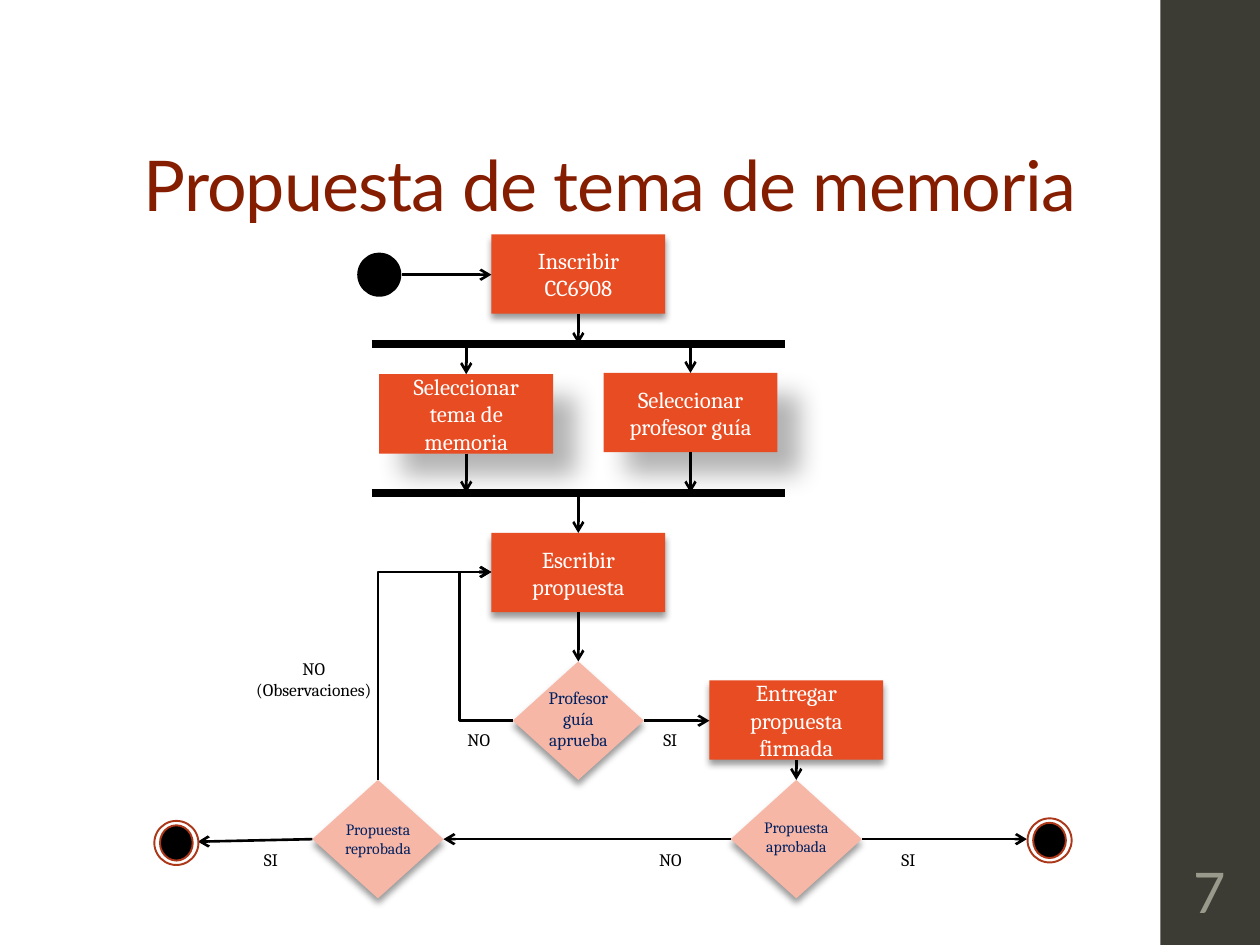
from lxml import etree
from pptx import Presentation
from pptx import util as u
from pptx.dml.color import RGBColor
from pptx.enum import shapes, text
from pptx.oxml.ns import qn

COLORS = {
    "band": "3C3C34", "title": "851D00", "number": "9A9A8C", "task": "E84C22",
    "decision": "F6B7A7", "decision_text": "002060", "ring": "AC3819",
    "ink": "000000", "paper": "FFFFFF",
}
TITLE = "Propuesta de tema de memoria"
PAGE_NUMBER = "7"
TASK_W, TASK_H = 1.38, 0.63
DECISION_W, DECISION_H = 1.04, 0.94
CENTER, LEFT, RIGHT, DELIVERY = 4.59, 3.7, 5.48, 6.32
REJECTED = 3.0
FORK_Y, JOIN_Y, FINAL_Y = 2.73, 3.91, 6.66

NEAR_SHADOW = {"alpha": 40, "blur": 4, "dist": 3, "dir": 90}
FAR_SHADOW = {"alpha": 30, "blur": 15, "dist": 18, "dir": 45}

TASKS = [
    ("Inscribir CC6908", CENTER, 1.86, NEAR_SHADOW),
    ("Seleccionar profesor guía", RIGHT, 2.96, FAR_SHADOW),
    ("Seleccionar tema de memoria", LEFT, 2.97, FAR_SHADOW),
    ("Escribir propuesta", CENTER, 4.23, NEAR_SHADOW),
    ("Entregar propuesta firmada", DELIVERY, 5.4, NEAR_SHADOW),
]
DECISIONS = [
    (["Profesor", "guía aprueba"], CENTER, 5.25, 5.4, 0.61, 10),
    (["Propuesta aprobada"], DELIVERY, 6.19, 6.44, 0.4, 9),
    (["Propuesta reprobada"], REJECTED, 6.19, 6.46, 0.4, 9),
]
BARS = [FORK_Y, JOIN_Y]
ARROWS = [
    (CENTER, 2.49, CENTER, FORK_Y),
    (LEFT, FORK_Y, LEFT, 2.97),
    (RIGHT, FORK_Y, RIGHT, 2.96),
    (LEFT, 3.6, LEFT, JOIN_Y),
    (RIGHT, 3.59, RIGHT, JOIN_Y),
    (CENTER, JOIN_Y, CENTER, 4.23),
    (CENTER, 4.86, CENTER, 5.25),
    (5.11, 5.72, 5.63, 5.72),
    (DELIVERY, 6.03, DELIVERY, 6.19),
    (5.8, FINAL_Y, 3.52, FINAL_Y),
    (3.19, 2.18, 3.9, 2.18),
    (2.48, FINAL_Y, 1.57, 6.68),
    (6.84, FINAL_Y, 8.15, FINAL_Y),
]
RETURNS = [
    (4.07, 5.72, 3.9, 4.54, 248300),
    (REJECTED, 6.19, 3.9, 4.54, 0),
]
START = (3.01, 2.18)
ENDS = [(8.33, 6.67), (1.4, 6.69)]
LABELS = [
    ("SI", 1.93, 6.69, 0.44, 0.27),
    ("NO\n(Observaciones)", 1.79, 5.17, 1.4, 0.44),
    ("SI", 6.99, 6.69, 0.44, 0.27),
    ("NO", 3.58, 5.74, 0.44, 0.27),
    ("NO", 5.1, 6.69, 0.44, 0.27),
    ("SI", 5.1, 5.74, 0.44, 0.27),
]

deck = Presentation()
deck.slide_width, deck.slide_height = u.Inches(10), u.Inches(7.5)
slide = deck.slides.add_slide(deck.slide_layouts[5])


def inches(*lengths):
    return [u.Inches(length) for length in lengths]


def rgb(name):
    return RGBColor.from_string(COLORS[name])


def add_run(paragraph, words, size, color, font="Cambria"):
    run = paragraph.add_run()
    run.text = words
    run.font.size, run.font.name = u.Pt(size), font
    run.font.color.rgb = rgb(color)
    return run


def write(frame, paragraphs, size, color, font="Cambria", anchor=text.MSO_ANCHOR.TOP):
    frame.word_wrap = True
    frame.vertical_anchor = anchor
    for i, words in enumerate(paragraphs):
        paragraph = frame.add_paragraph() if i else frame.paragraphs[0]
        paragraph.alignment = text.PP_ALIGN.CENTER
        for j, line in enumerate(words.split("\n")):
            if j:
                paragraph.add_line_break()
            add_run(paragraph, line, size, color, font)


def add_text(paragraphs, box, size, color):
    label = slide.shapes.add_textbox(*inches(*box))
    write(label.text_frame, paragraphs, size, color)


def add_shape(kind, box, fill, line=None, shadow=None):
    shape = slide.shapes.add_shape(kind, *inches(*box))
    shape.shadow.inherit = False
    shape.fill.solid()
    shape.fill.fore_color.rgb = rgb(fill)
    if line:
        shape.line.color.rgb = rgb(line)
        shape.line.width = u.Pt(1.1)
    else:
        shape.line.fill.background()
    if shadow:
        effects = shape._element.spPr.find(qn("a:effectLst"))
        outer = etree.SubElement(
            effects, qn("a:outerShdw"), blurRad=str(u.Pt(shadow["blur"])),
            dist=str(u.Pt(shadow["dist"])), dir=str(shadow["dir"] * 60000), rotWithShape="0")
        tint = etree.SubElement(outer, qn("a:srgbClr"), val=COLORS["ink"])
        etree.SubElement(tint, qn("a:alpha"), val=str(shadow["alpha"] * 1000))
    return shape


def add_circle(center, width, height, fill, line=None):
    x, y = center
    box = (x - width / 2, y - height / 2, width, height)
    add_shape(shapes.MSO_SHAPE.OVAL, box, fill, line)


def add_line(ends, width=1.5, arrow=True, bend=None):
    kind = shapes.MSO_CONNECTOR.STRAIGHT if bend is None else shapes.MSO_CONNECTOR.ELBOW
    line = slide.shapes.add_connector(kind, *inches(*ends))
    line.line.color.rgb = rgb("ink")
    line.line.width = u.Pt(width)
    properties = line._element.spPr
    if arrow:
        etree.SubElement(properties.find(qn("a:ln")), qn("a:tailEnd"), type="arrow")
    if bend is not None:
        guides = properties.find(qn("a:prstGeom")).get_or_add_avLst()
        etree.SubElement(guides, qn("a:gd"), name="adj1", fmla=f"val {bend}")
    etree.SubElement(properties, qn("a:effectLst"))


add_shape(shapes.MSO_SHAPE.RECTANGLE, (9.21, 0, 0.79, 7.5), "band")

title = slide.shapes.title
title.left, title.top, title.width, title.height = inches(1.04, 0.4, 7.95, 1.45)
write(title.text_frame, [TITLE], 40, "title", "Lato", text.MSO_ANCHOR.BOTTOM)
heading = title.text_frame.paragraphs[0]
heading.alignment = text.PP_ALIGN.LEFT
heading.line_spacing = 0.9
heading.runs[0]._r.get_or_add_rPr().set("spc", "-50")

number = slide.shapes.add_textbox(*inches(9.23, 6.75, 0.75, 0.65)).text_frame
number.margin_left = number.margin_right = u.Inches(0.03)
write(number, [PAGE_NUMBER], 32, "number", "Lato", text.MSO_ANCHOR.MIDDLE)

for words, center, top, shadow in TASKS:
    box = (center - TASK_W / 2, top, TASK_W, TASK_H)
    task = add_shape(shapes.MSO_SHAPE.RECTANGLE, box, "task", shadow=shadow)
    write(task.text_frame, [words], 13, "paper", anchor=text.MSO_ANCHOR.MIDDLE)

for words, center, top, text_top, text_height, size in DECISIONS:
    box = (center - DECISION_W / 2, top, DECISION_W, DECISION_H)
    add_shape(shapes.MSO_SHAPE.DIAMOND, box, "decision", shadow=NEAR_SHADOW)
    add_text(words, (center - 0.44, text_top, 0.88, text_height), size, "decision_text")

for y in BARS:
    add_line((2.95, y, 6.23, y), width=4.5, arrow=False)
for ends in ARROWS:
    add_line(ends)
for *ends, bend in RETURNS:
    add_line(ends, bend=bend)

add_circle(START, 0.35, 0.35, "ink")
for center in ENDS:
    add_circle(center, 0.35, 0.35, "paper", "ring")
    add_circle(center, 0.26, 0.28, "ink", "ring")

for words, *box in LABELS:
    add_text([words], box, 10, "ink")

deck.save("out.pptx")
